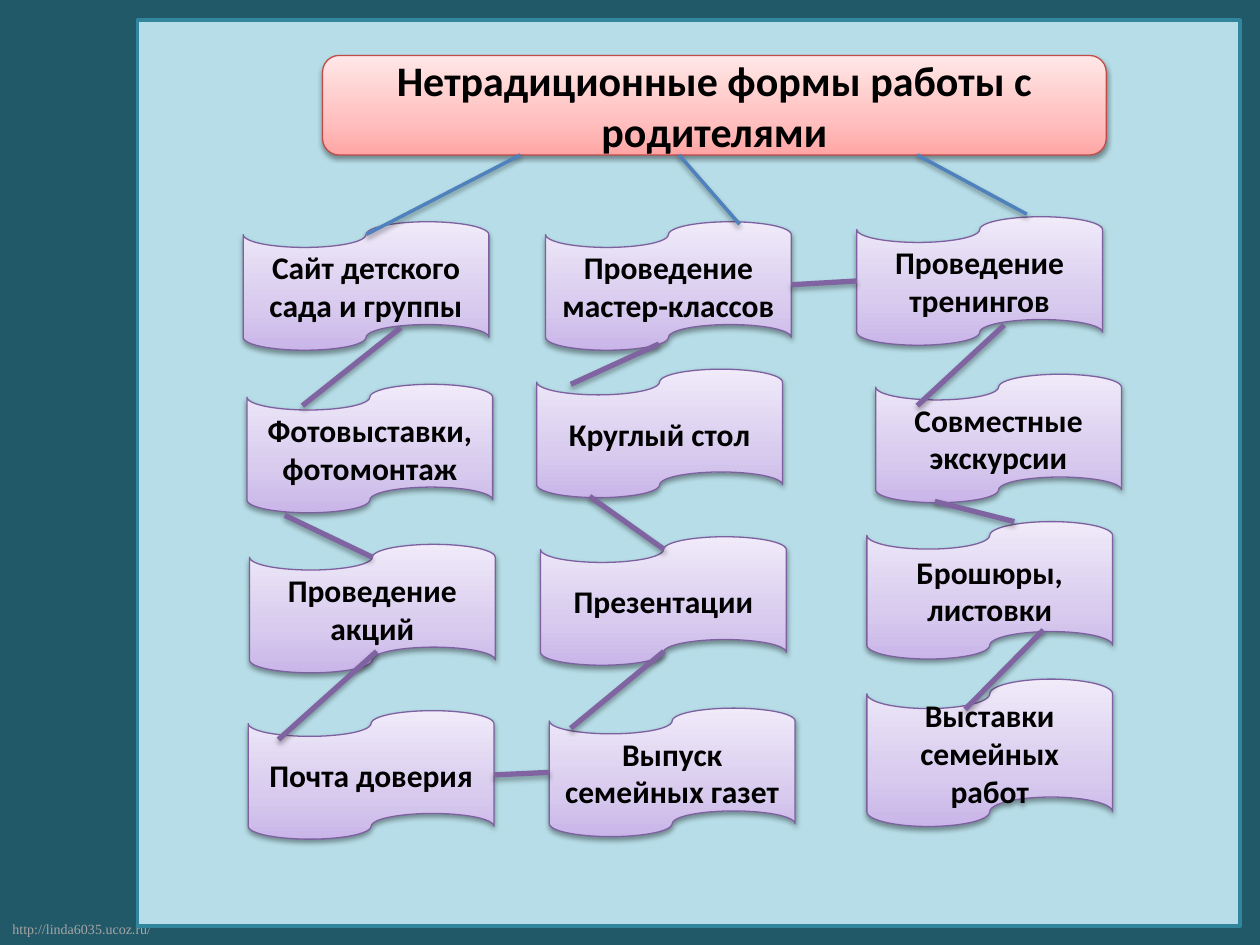
from dataclasses import dataclass
from copy import deepcopy
from lxml.etree import SubElement
from pptx import Presentation
from pptx.dml.color import RGBColor
from pptx.enum.shapes import MSO_CONNECTOR, MSO_SHAPE
from pptx.enum.text import MSO_ANCHOR, MSO_AUTO_SIZE, PP_ALIGN
from pptx.oxml.ns import qn
from pptx.util import Inches, Pt


@dataclass(frozen=True)
class Theme:
    back: str = "215968"
    panel: str = "B7DEE8"
    frame: str = "31859C"
    ink: str = "000000"
    muted: str = "A6A6A6"
    lilac: tuple = ("C9B5E8", "D8CBEE", "F0EAF9")
    purple: str = "7D60A0"
    rose: tuple = ("FFA6A5", "FFC0BF", "FFE7E7")
    red: str = "BF4C48"
    link: str = "8064A2"
    branch: str = "4F81BD"
    font: str = "Calibri"
    serif: str = "Times New Roman"
    title: int = 24
    body: int = 18
    small: int = 8


THEME = Theme()
STOPS = (0, 0.35, 1)
WIDE, HIGH = 1.95, 1.02

TITLE = "Нетрадиционные формы работы с родителями"
SITE = "http://linda6035.ucoz.ru/"

# text, left, top, height
CARDS = [
    ("Сайт детского сада и группы", 1.93, 1.76, HIGH),
    ("Фотовыставки, фотомонтаж", 1.96, 3.05, HIGH),
    ("Проведение акций", 1.98, 4.32, HIGH),
    ("Почта доверия", 1.97, 5.64, HIGH),
    ("Выпуск семейных газет", 4.36, 5.62, HIGH),
    ("Презентации", 4.29, 4.26, HIGH),
    ("Круглый стол", 4.26, 2.93, HIGH),
    ("Проведение мастер-классов", 4.33, 1.76, HIGH),
    ("Проведение тренингов", 6.8, 1.72, HIGH),
    ("Совместные экскурсии", 6.95, 2.97, HIGH),
    ("Брошюры, листовки", 6.88, 4.14, 1.09),
    ("Выставки семейных работ", 6.88, 5.39, 1.17),
]

# start x, start y, end x, end y
LINKS = [
    (3.18, 2.6, 2.4, 3.22),
    (2.26, 4.09, 2.95, 4.42),
    (2.99, 5.17, 2.21, 5.87),
    (3.92, 6.15, 4.36, 6.13),
    (4.53, 5.78, 5.27, 5.17),
    (5.27, 4.36, 4.68, 3.94),
    (4.53, 3.05, 5.23, 2.73),
    (6.28, 2.26, 6.8, 2.23),
    (7.97, 2.58, 7.28, 3.22),
    (7.42, 3.98, 8.05, 4.14),
    (8.28, 5, 7.66, 5.63),
]
BRANCHES = [
    (4.13, 1.23, 2.91, 1.86),
    (5.39, 1.23, 5.87, 1.78),
    (7.28, 1.23, 8.15, 1.7),
]


def rgb(color):
    return RGBColor.from_string(color)


def add_shadow(effects, alpha, dist):
    outer = SubElement(effects, qn("a:outerShdw"), blurRad=str(Pt(3.1)),
                       dist=str(Pt(dist)), dir="5400000", rotWithShape="0")
    color = SubElement(outer, qn("a:srgbClr"), val=THEME.ink)
    SubElement(color, qn("a:alpha"), val=str(alpha * 1000))


def set_line(line, color, width):
    line.color.rgb = rgb(color)
    line.width = Pt(width)


def set_grad(shape, colors):
    """Fill from bottom to top with three colours."""
    fill = shape.fill
    fill.gradient()
    fill.gradient_angle = 90
    stops = shape._element.spPr.find(".//" + qn("a:gsLst"))
    stops.append(deepcopy(stops[-1]))
    for stop, color, place in zip(fill.gradient_stops, colors, STOPS):
        stop.color.rgb = rgb(color)
        stop.position = place


def set_font(para, name, size, color, bold=False):
    for run in para.runs:
        font = run.font
        font.name, font.size, font.bold = name, Pt(size), bold
        font.color.rgb = rgb(color)


def add_box(slide, kind, box):
    shape = slide.shapes.add_shape(kind, *map(Inches, box))
    shape.shadow.inherit = False
    return shape


def add_card(slide, kind, box, text, size, colors, edge):
    shape = add_box(slide, kind, box)
    set_grad(shape, colors)
    set_line(shape.line, edge, 0.75)
    add_shadow(shape._element.spPr.find(qn("a:effectLst")), 38, 1.6)
    frame = shape.text_frame
    frame.text = text
    frame.word_wrap = True
    frame.vertical_anchor = MSO_ANCHOR.MIDDLE
    para = frame.paragraphs[0]
    para.alignment = PP_ALIGN.CENTER
    set_font(para, THEME.font, size, THEME.ink, True)


def add_lines(slide, ends, color, width, alpha, dist):
    for points in ends:
        line = slide.shapes.add_connector(MSO_CONNECTOR.STRAIGHT, *map(Inches, points))
        set_line(line.line, color, width)
        add_shadow(SubElement(line._element.spPr, qn("a:effectLst")), alpha, dist)


def add_base(slide):
    """Draw the background, site address and framed panel."""
    fill = slide.background.fill
    fill.solid()
    fill.fore_color.rgb = rgb(THEME.back)
    note = slide.shapes.add_textbox(*map(Inches, (0, 7.26, 1.31, 0.24)))
    frame = note.text_frame
    frame.text = SITE
    frame.word_wrap = False
    frame.auto_size = MSO_AUTO_SIZE.SHAPE_TO_FIT_TEXT
    set_font(frame.paragraphs[0], THEME.serif, THEME.small, THEME.muted)
    panel = add_box(slide, MSO_SHAPE.RECTANGLE, (1.09, 0.16, 8.75, 7.19))
    panel.fill.solid()
    panel.fill.fore_color.rgb = rgb(THEME.panel)
    set_line(panel.line, THEME.frame, 2)


def main():
    deck = Presentation()
    deck.slide_width, deck.slide_height = Inches(10), Inches(7.5)
    slide = deck.slides.add_slide(deck.slide_layouts[6])
    add_base(slide)
    for text, left, top, height in CARDS:
        add_card(slide, MSO_SHAPE.FLOWCHART_PUNCHED_TAPE, (left, top, WIDE, height),
                 text, THEME.body, THEME.lilac, THEME.purple)
    add_lines(slide, LINKS, THEME.link, 3, 35, 1.8)
    add_card(slide, MSO_SHAPE.ROUNDED_RECTANGLE, (2.56, 0.44, 6.22, 0.79),
             TITLE, THEME.title, THEME.rose, THEME.red)
    add_lines(slide, BRANCHES, THEME.branch, 2, 38, 1.6)
    deck.save("out.pptx")


if __name__ == "__main__":
    main()
